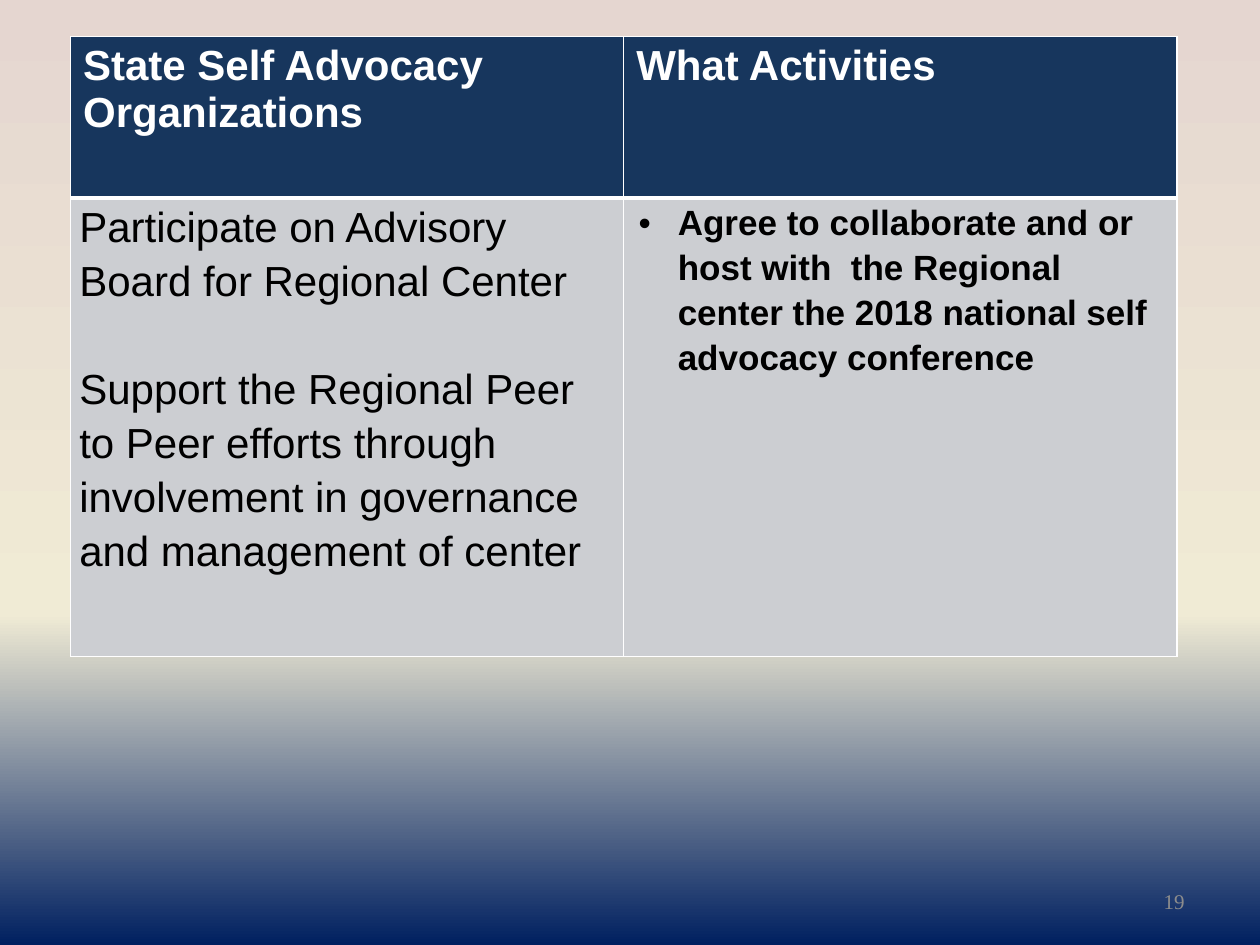
from dataclasses import dataclass

import lxml.etree
import pptx
import pptx.dml.color
import pptx.enum.text
import pptx.oxml.ns
import pptx.util

Inches = pptx.util.Inches
Pt = pptx.util.Pt
qn = pptx.oxml.ns.qn


@dataclass(frozen=True)
class Theme:
    font: str = "Arial"
    number_font: str = "Times New Roman"
    heading_size: int = 24
    activity_size: int = 20
    number_size: int = 12
    heading_fill: str = "17365D"
    body_fill: str = "CCCED2"
    white: str = "FFFFFF"
    black: str = "000000"
    number_color: str = "8C8C8C"
    background: tuple = ((0, "E5D6D0"), (65, "F0EBD5"), (100, "002060"))
    thin_border: float = 1
    thick_border: float = 3


THEME = Theme()
HEADINGS = ("State Self Advocacy Organizations", "What Activities")
ROLES = (
    "Participate on Advisory Board for Regional Center",
    "Support the Regional Peer to Peer efforts through involvement in "
    "governance and management of center",
)
ACTIVITY = ("Agree to collaborate and or host with  the Regional center "
            "the 2018 national self advocacy conference")


def rgb(color):
    return pptx.dml.color.RGBColor.from_string(color)


def add_run(paragraph, text, size, color, bold=False, font=THEME.font):
    run = paragraph.add_run()
    run.text = text
    run.font.name = font
    run.font.size = Pt(size)
    run.font.bold = bold
    run.font.color.rgb = rgb(color)


def paint_background(slide):
    fill = slide.background.fill
    fill.gradient()
    fill.gradient_angle = 270
    stops = next(slide.element.iter(qn("a:gsLst")))
    for stop in list(stops):
        stops.remove(stop)
    for percent, color in THEME.background:
        stop = lxml.etree.SubElement(stops, qn("a:gs"), pos=str(percent * 1000))
        lxml.etree.SubElement(stop, qn("a:srgbClr"), val=color)


def style_cell(cell, color, top, bottom):
    """Fill the cell and draw white borders with the given top and bottom widths."""
    cell.fill.solid()
    cell.fill.fore_color.rgb = rgb(color)
    properties = cell._tc.get_or_add_tcPr()
    widths = {"lnL": THEME.thin_border, "lnR": THEME.thin_border,
              "lnT": top, "lnB": bottom}
    for index, (side, width) in enumerate(widths.items()):
        line = lxml.etree.Element(qn(f"a:{side}"), w=str(Pt(width)))
        solid = lxml.etree.SubElement(line, qn("a:solidFill"))
        lxml.etree.SubElement(solid, qn("a:srgbClr"), val=THEME.white)
        properties.insert(index, line)


def set_margins(cell, side):
    cell.margin_left = cell.margin_right = Inches(side)
    cell.margin_top = cell.margin_bottom = 0


def add_bullet(paragraph, indent):
    properties = paragraph._p.get_or_add_pPr()
    properties.set("marL", str(Inches(indent)))
    properties.set("indent", str(-Inches(indent)))
    lxml.etree.SubElement(properties, qn("a:buFont"), typeface=THEME.font)
    lxml.etree.SubElement(properties, qn("a:buChar"), char="•")


def fill_roles(cell):
    set_margins(cell, 0.07)
    frame = cell.text_frame
    for index, text in enumerate(ROLES):
        paragraph = frame.add_paragraph() if index else frame.paragraphs[0]
        paragraph.line_spacing = 1.15
        if index:
            paragraph.space_before = Pt(31)
        add_run(paragraph, text, THEME.heading_size, THEME.black)


def fill_activity(cell):
    set_margins(cell, 0.12)
    paragraph = cell.text_frame.paragraphs[0]
    paragraph.line_spacing = 1.15
    paragraph.space_after = Pt(10)
    add_bullet(paragraph, 0.31)
    add_run(paragraph, ACTIVITY, THEME.activity_size, THEME.black, bold=True)


def add_activity_table(slide):
    table = slide.shapes.add_table(
        2, 2, Inches(0.56), Inches(0.29), Inches(8.78), Inches(4.92)).table
    for row, height in zip(table.rows, (1.28, 3.64)):
        row.height = Inches(height)
    for column, heading in enumerate(HEADINGS):
        table.columns[column].width = Inches(4.39)
        cell = table.cell(0, column)
        style_cell(cell, THEME.heading_fill, THEME.thin_border, THEME.thick_border)
        add_run(cell.text_frame.paragraphs[0], heading, THEME.heading_size,
                THEME.white, bold=True)
        style_cell(table.cell(1, column), THEME.body_fill,
                   THEME.thick_border, THEME.thin_border)
    fill_roles(table.cell(1, 0))
    fill_activity(table.cell(1, 1))


def add_slide_number(slide, number):
    box = slide.shapes.add_textbox(
        Inches(7.17), Inches(6.95), Inches(2.33), Inches(0.4))
    frame = box.text_frame
    frame.word_wrap = True
    frame.vertical_anchor = pptx.enum.text.MSO_ANCHOR.MIDDLE
    paragraph = frame.paragraphs[0]
    paragraph.alignment = pptx.enum.text.PP_ALIGN.RIGHT
    add_run(paragraph, number, THEME.number_size, THEME.number_color,
            font=THEME.number_font)


def main():
    presentation = pptx.Presentation()
    presentation.slide_width = Inches(10)
    presentation.slide_height = Inches(7.5)
    slide = presentation.slides.add_slide(presentation.slide_layouts[6])
    paint_background(slide)
    add_slide_number(slide, "19")
    add_activity_table(slide)
    presentation.save("out.pptx")


if __name__ == "__main__":
    main()
